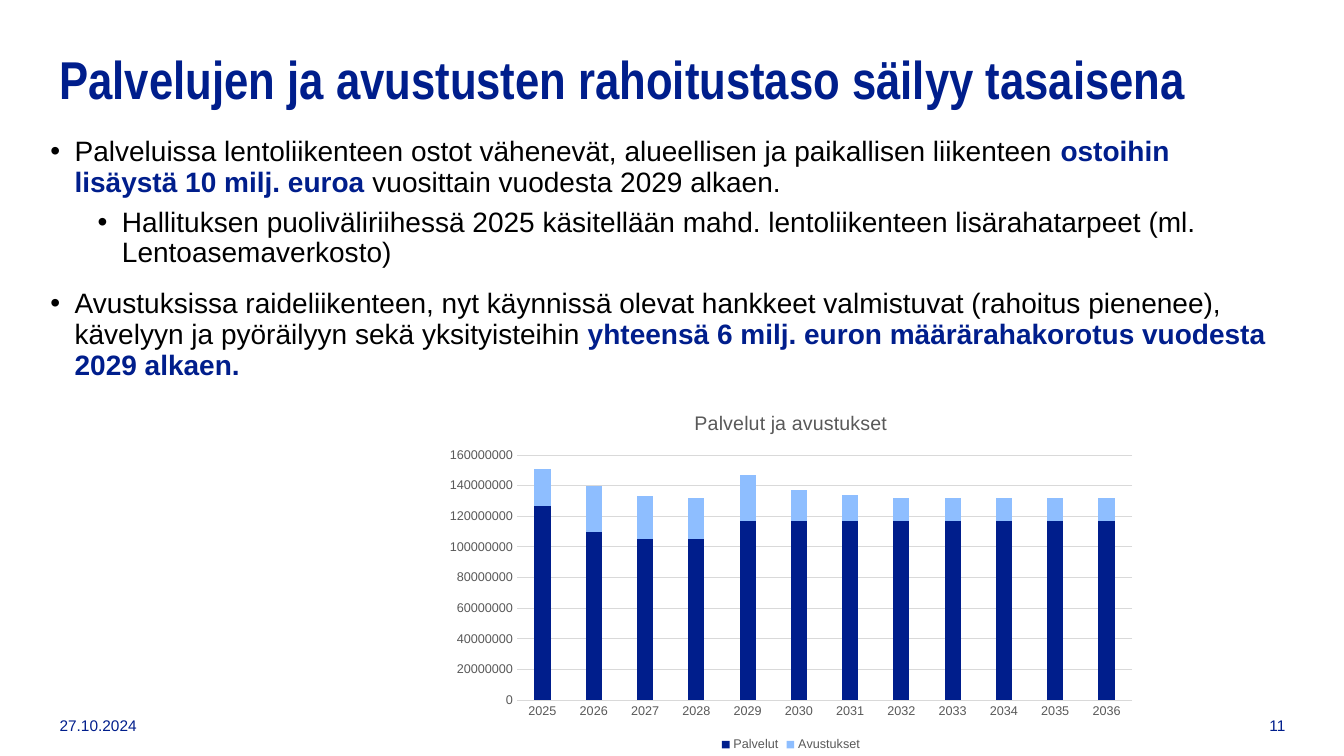
from lxml.etree import SubElement
from pptx import Presentation
from pptx.chart.data import CategoryChartData
from pptx.dml.color import RGBColor
from pptx.enum.chart import XL_CHART_TYPE, XL_LEGEND_POSITION, XL_TICK_MARK
from pptx.enum.text import MSO_ANCHOR, MSO_AUTO_SIZE, PP_ALIGN
from pptx.oxml.ns import qn
from pptx.util import Inches, Pt

NAVY = RGBColor(0x00, 0x1E, 0x8C)
SKY = RGBColor(0x8E, 0xBE, 0xFF)
BLACK = RGBColor(0x00, 0x00, 0x00)
GREY = RGBColor(0x59, 0x59, 0x59)
GRID = RGBColor(0xD9, 0xD9, 0xD9)
MILLION = 1_000_000

BULLETS = [
    (0, 0, [
        ("Palveluissa lentoliikenteen ostot vähenevät, alueellisen ja paikallisen liikenteen ", False),
        ("ostoihin lisäystä 10 milj. euroa", True),
        (" vuosittain vuodesta 2029 alkaen.", False),
    ]),
    (1, 6, [
        ("Hallituksen puoliväliriihessä 2025 käsitellään mahd. lentoliikenteen lisärahatarpeet "
         "(ml. Lentoasemaverkosto)", False),
    ]),
    (0, 14, [
        ("Avustuksissa raideliikenteen, nyt käynnissä olevat hankkeet valmistuvat (rahoitus pienenee), "
         "kävelyyn ja pyöräilyyn sekä yksityisteihin ", False),
        ("yhteensä 6 milj. euron määrärahakorotus vuodesta 2029 alkaen.", True),
    ]),
]
YEARS = [str(year) for year in range(2025, 2037)]
FUNDING = [
    ("Palvelut", NAVY, [127, 110, 105, 105] + [117] * 8),
    ("Avustukset", SKY, [24, 30, 28, 27, 30, 20, 17] + [15] * 5),
]


def style_font(font, size, color, bold=False, name="Arial"):
    font.name = name
    font.size = Pt(size)
    font.bold = bold
    font.color.rgb = color


def prepare_frame(box, anchor):
    frame = box.text_frame
    frame.word_wrap = True
    frame.auto_size = MSO_AUTO_SIZE.NONE
    frame.vertical_anchor = anchor
    frame.margin_left = frame.margin_right = frame.margin_top = frame.margin_bottom = 0
    return frame


def place_title(page, text):
    title = page.shapes.title
    title.left, title.top = Inches(0.59), Inches(-0.21)
    title.width, title.height = Inches(11.52), Inches(1.31)
    para = prepare_frame(title, MSO_ANCHOR.BOTTOM).paragraphs[0]
    para.alignment = PP_ALIGN.LEFT
    para.line_spacing = 0.9
    span = para.add_run()
    span.text = text
    style_font(span.font, 38, NAVY, bold=True, name="Arial Narrow")


def add_footer(page, text, left, width, alignment=PP_ALIGN.LEFT):
    box = page.shapes.add_textbox(Inches(left), Inches(7.04), Inches(width), Inches(0.31))
    para = prepare_frame(box, MSO_ANCHOR.MIDDLE).paragraphs[0]
    para.alignment = alignment
    span = para.add_run()
    span.text = text
    style_font(span.font, 11, NAVY)


def set_bullet(para, level):
    para.level = level
    properties = para._p.get_or_add_pPr()
    properties.set("marL", str(Inches(0.24 + 0.47 * level)))
    properties.set("indent", str(Inches(-0.24)))
    SubElement(properties, qn("a:buFont"), typeface="Arial")
    SubElement(properties, qn("a:buChar"), char="•")


def add_bullets(page):
    box = page.shapes.add_textbox(Inches(0.5), Inches(1.36), Inches(12.06), Inches(2.62))
    frame = prepare_frame(box, MSO_ANCHOR.TOP)
    for index, (level, space_before, spans) in enumerate(BULLETS):
        para = frame.add_paragraph() if index else frame.paragraphs[0]
        set_bullet(para, level)
        para.line_spacing = 0.92
        para.space_before = Pt(space_before)
        for text, emphasis in spans:
            span = para.add_run()
            span.text = text
            style_font(span.font, 20, NAVY if emphasis else BLACK, bold=emphasis)


def style_axis(axis):
    axis.major_tick_mark = axis.minor_tick_mark = XL_TICK_MARK.NONE
    style_font(axis.tick_labels.font, 9, GREY)


def style_line(line):
    line.color.rgb = GRID
    line.width = Pt(0.75)


def add_funding_chart(page):
    data = CategoryChartData()
    data.categories = YEARS
    for name, _, values in FUNDING:
        data.add_series(name, [value * MILLION for value in values])
    chart = page.shapes.add_chart(
        XL_CHART_TYPE.COLUMN_STACKED, Inches(4.32), Inches(3.91), Inches(7.05), Inches(3.59), data
    ).chart
    style_font(chart.font, 10, BLACK)

    chart.has_title = True
    chart.chart_title.include_in_layout = False
    para = chart.chart_title.text_frame.paragraphs[0]
    span = para.add_run()
    span.text = "Palvelut ja avustukset"
    style_font(span.font, 14, GREY)

    chart.has_legend = True
    chart.legend.position = XL_LEGEND_POSITION.BOTTOM
    chart.legend.include_in_layout = False
    style_font(chart.legend.font, 9, GREY)

    plot = chart.plots[0]
    plot.gap_width = 219
    plot.overlap = 100
    plot.vary_by_categories = False
    for series, (_, color, _) in zip(plot.series, FUNDING):
        series.format.fill.solid()
        series.format.fill.fore_color.rgb = color

    style_axis(chart.category_axis)
    style_line(chart.category_axis.format.line)
    amounts = chart.value_axis
    style_axis(amounts)
    amounts.minimum_scale = 0
    amounts.maximum_scale = 160 * MILLION
    amounts.major_unit = 20 * MILLION
    amounts.format.line.fill.background()
    amounts.has_major_gridlines = True
    style_line(amounts.major_gridlines.format.line)


def main():
    deck = Presentation()
    deck.slide_width = Inches(13.33)
    deck.slide_height = Inches(7.5)
    page = deck.slides.add_slide(deck.slide_layouts[5])
    place_title(page, "Palvelujen ja avustusten rahoitustaso säilyy tasaisena")
    add_footer(page, "27.10.2024", 0.59, 0.98)
    add_footer(page, "11", 11.96, 0.79, PP_ALIGN.RIGHT)
    add_funding_chart(page)
    add_bullets(page)
    deck.save("out.pptx")


if __name__ == "__main__":
    main()
